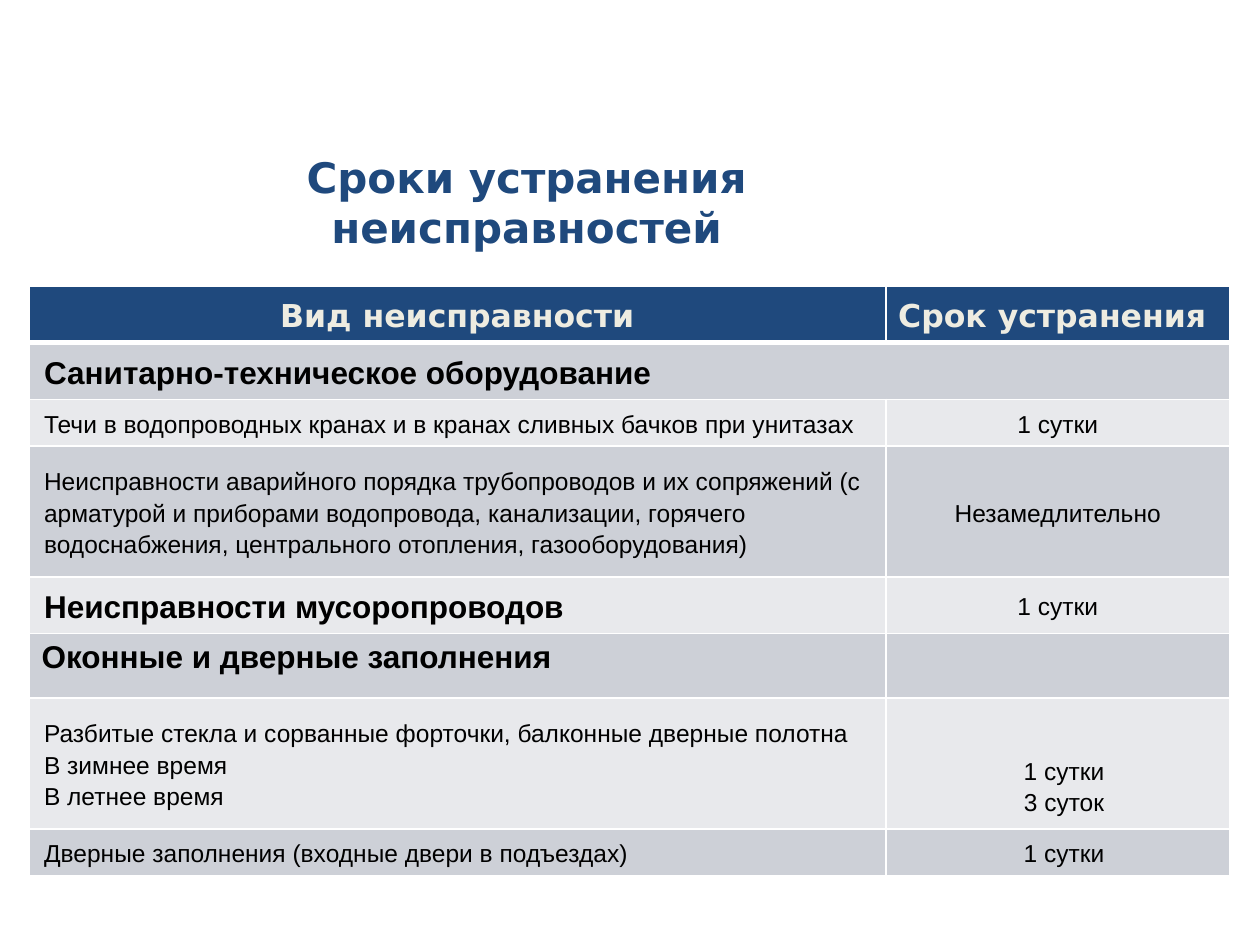
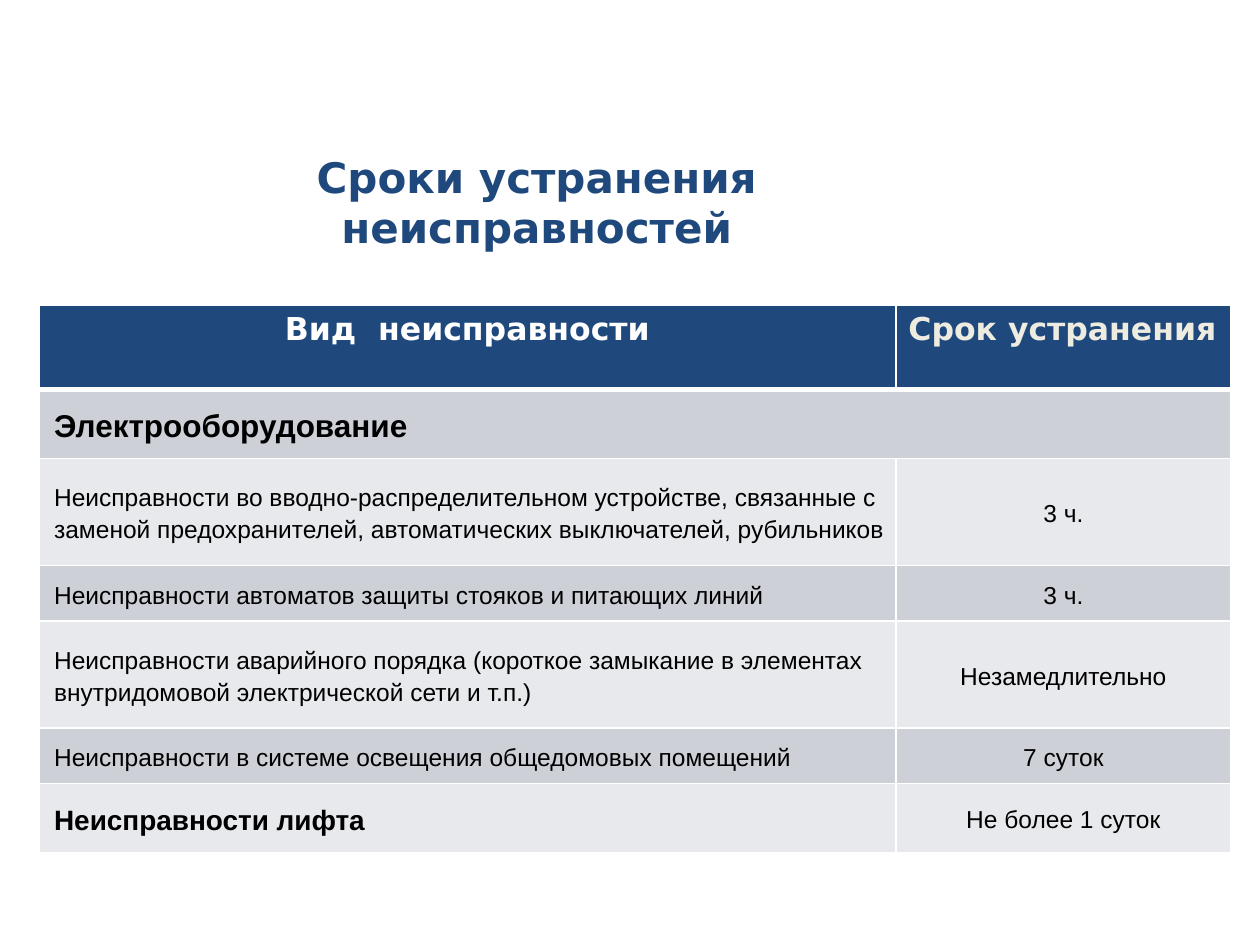
import dataclasses

import pptx
import pptx.dml.color
import pptx.enum.text
import pptx.oxml
import pptx.oxml.ns
import pptx.util

NAVY = pptx.dml.color.RGBColor(0x1F, 0x49, 0x7D)
CREAM = pptx.dml.color.RGBColor(0xEE, 0xEC, 0xE1)
WHITE = pptx.dml.color.RGBColor(0xFF, 0xFF, 0xFF)
BLACK = pptx.dml.color.RGBColor(0, 0, 0)
BANDS = (
    pptx.dml.color.RGBColor(0xE8, 0xE9, 0xEC),
    pptx.dml.color.RGBColor(0xCD, 0xD0, 0xD7),
)
HEAD_FONT = "DejaVu Sans"
BODY_FONT = "Arial"
LEFT = pptx.enum.text.PP_ALIGN.LEFT
CENTER = pptx.enum.text.PP_ALIGN.CENTER
MIDDLE = pptx.enum.text.MSO_ANCHOR.MIDDLE
TITLE = "Сроки устранения неисправностей"


@dataclasses.dataclass(frozen=True)
class Style:
    size: int = 14
    bold: bool = False
    font: str = BODY_FONT
    color: pptx.dml.color.RGBColor = BLACK
    align: pptx.enum.text.PP_ALIGN = LEFT
    indent: float = 0
    compact: bool = True


ITEM = Style(indent=1)
GROUP = Style(size=18, bold=True, indent=1)
SMALL_GROUP = Style(size=16, bold=True, indent=1)
LOOSE_GROUP = Style(size=18, bold=True, compact=False)
TERM = Style(align=CENTER)
INDENTED_TERM = Style(align=CENTER, indent=1)
HEAD = Style(size=18, bold=True, font=HEAD_FONT, color=CREAM, align=CENTER)
LOOSE_HEAD = dataclasses.replace(HEAD, color=WHITE, compact=False)
LEFT_HEAD = dataclasses.replace(HEAD, align=LEFT, compact=False)

HOUSE_ROWS = [
    (4.5, ("Вид неисправности", HEAD), ("Срок устранения ", HEAD)),
    (4.5, ("Санитарно-техническое оборудование", GROUP), None),
    (3.7, ("Течи в водопроводных кранах и в кранах сливных бачков при унитазах", ITEM),
     ("1 сутки", TERM)),
    (10.4, ("Неисправности аварийного порядка трубопроводов и их сопряжений "
            "(с арматурой и приборами водопровода, канализации, горячего "
            "водоснабжения, центрального отопления, газооборудования)", ITEM),
     ("Незамедлительно", TERM)),
    (4.5, ("Неисправности мусоропроводов", GROUP), ("1 сутки", TERM)),
    (5.1, ("Оконные и дверные заполнения", LOOSE_GROUP), ("", LOOSE_GROUP)),
    (10.4, ("Разбитые стекла и сорванные форточки, балконные дверные полотна\n"
            "В зимнее время\nВ летнее время", ITEM),
     ("\n1 сутки\n3 суток", INDENTED_TERM)),
    (3.7, ("Дверные заполнения (входные двери в подъездах)", ITEM),
     ("1 сутки", INDENTED_TERM)),
]

POWER_ROWS = [
    (6.7, ("Вид  неисправности", LOOSE_HEAD), ("Срок устранения", LEFT_HEAD)),
    (5.5, ("Электрооборудование", GROUP), None),
    (8.5, ("Неисправности во вводно-распределительном устройстве, связанные с "
           "заменой предохранителей, автоматических выключателей, рубильников", ITEM),
     ("3 ч.", TERM)),
    (4.4, ("Неисправности автоматов защиты стояков и питающих линий", ITEM),
     ("3 ч.", TERM)),
    (8.5, ("Неисправности аварийного порядка (короткое замыкание в элементах "
           "внутридомовой электрической сети и т.п.)", ITEM),
     ("Незамедлительно", TERM)),
    (4.4, ("Неисправности в системе освещения общедомовых помещений", ITEM),
     ("7 суток", TERM)),
    (5.5, ("Неисправности лифта", SMALL_GROUP), ("Не более 1 суток", TERM)),
]


class Deck:
    COLS, ROWS = 100, 75

    def __init__(self):
        self.prs = pptx.Presentation()
        self.prs.slide_width = pptx.util.Inches(10)
        self.prs.slide_height = pptx.util.Inches(7.5)
        self.s = None

    def x(self, cols):
        return round(self.prs.slide_width * cols / self.COLS)

    def y(self, rows):
        return round(self.prs.slide_height * rows / self.ROWS)

    def add_slide(self):
        self.s = self.prs.slides.add_slide(self.prs.slide_layouts[5])

    def title(self, text, width):
        sp = self.s.shapes.title
        sp.left, sp.top = self.x(21.9), self.y(10.9)
        sp.width, sp.height = self.x(width), self.y(10.2)
        sp.text_frame.vertical_anchor = MIDDLE
        style = Style(24, True, HEAD_FONT, NAVY, CENTER, compact=False)
        self.text(sp.text_frame, text, style)

    def text(self, tf, text, style):
        p = tf.paragraphs[0]
        p.alignment = style.align
        if style.indent:
            pPr = p._p.get_or_add_pPr()
            pPr.set("marL", str(self.x(style.indent)))
            pPr.set("indent", "0")
        if style.compact:
            p.line_spacing = 1.15
        for i, line in enumerate(text.split("\n")):
            if i:
                p.add_line_break()
            if line:
                r = p.add_run()
                r.text = line
                r.font.size = pptx.util.Pt(style.size)
                r.font.bold = style.bold
                r.font.name = style.font
                r.font.color.rgb = style.color

    def borders(self, cell, top, bottom):
        tcPr = cell._tc.get_or_add_tcPr()
        for side, width in (("L", 1), ("R", 1), ("T", top), ("B", bottom)):
            tcPr.append(pptx.oxml.parse_xml(
                f'<a:ln{side} {pptx.oxml.ns.nsdecls("a")} w="{pptx.util.Pt(width)}">'
                f'<a:solidFill><a:srgbClr val="{WHITE}"/></a:solidFill></a:ln{side}>'))

    def cell(self, cell, content, row):
        self.borders(cell, 3 if row == 1 else 1, 3 if row == 0 else 1)
        cell.fill.solid()
        cell.fill.fore_color.rgb = BANDS[row % 2] if row else NAVY
        if content is None:
            return
        text, style = content
        if style.compact:
            cell.vertical_anchor = MIDDLE
            cell.margin_left = cell.margin_right = self.x(0.2)
            cell.margin_top = cell.margin_bottom = self.y(0.2)
        self.text(cell.text_frame, text, style)

    def table(self, left, top, widths, rows):
        height = sum(row[0] for row in rows)
        frame = self.s.shapes.add_table(
            len(rows), len(widths), self.x(left), self.y(top),
            self.x(sum(widths)), self.y(height))
        table = frame.table
        for column, width in zip(table.columns, widths):
            column.width = self.x(width)
        for i, (row_height, *contents) in enumerate(rows):
            table.rows[i].height = self.y(row_height)
            for j, content in enumerate(contents):
                self.cell(table.cell(i, j), content, i)
            if contents[1] is None:
                table.cell(i, 0).merge(table.cell(i, 1))


def main():
    deck = Deck()
    for title_width, left, top, widths, rows in (
        (39.8, 2.3, 22.7, (68, 27.3), HOUSE_ROWS),
        (41.4, 3.1, 24.2, (68, 26.6), POWER_ROWS),
    ):
        deck.add_slide()
        deck.title(TITLE, title_width)
        deck.table(left, top, widths, rows)
    deck.prs.save("out.pptx")


if __name__ == "__main__":
    main()
